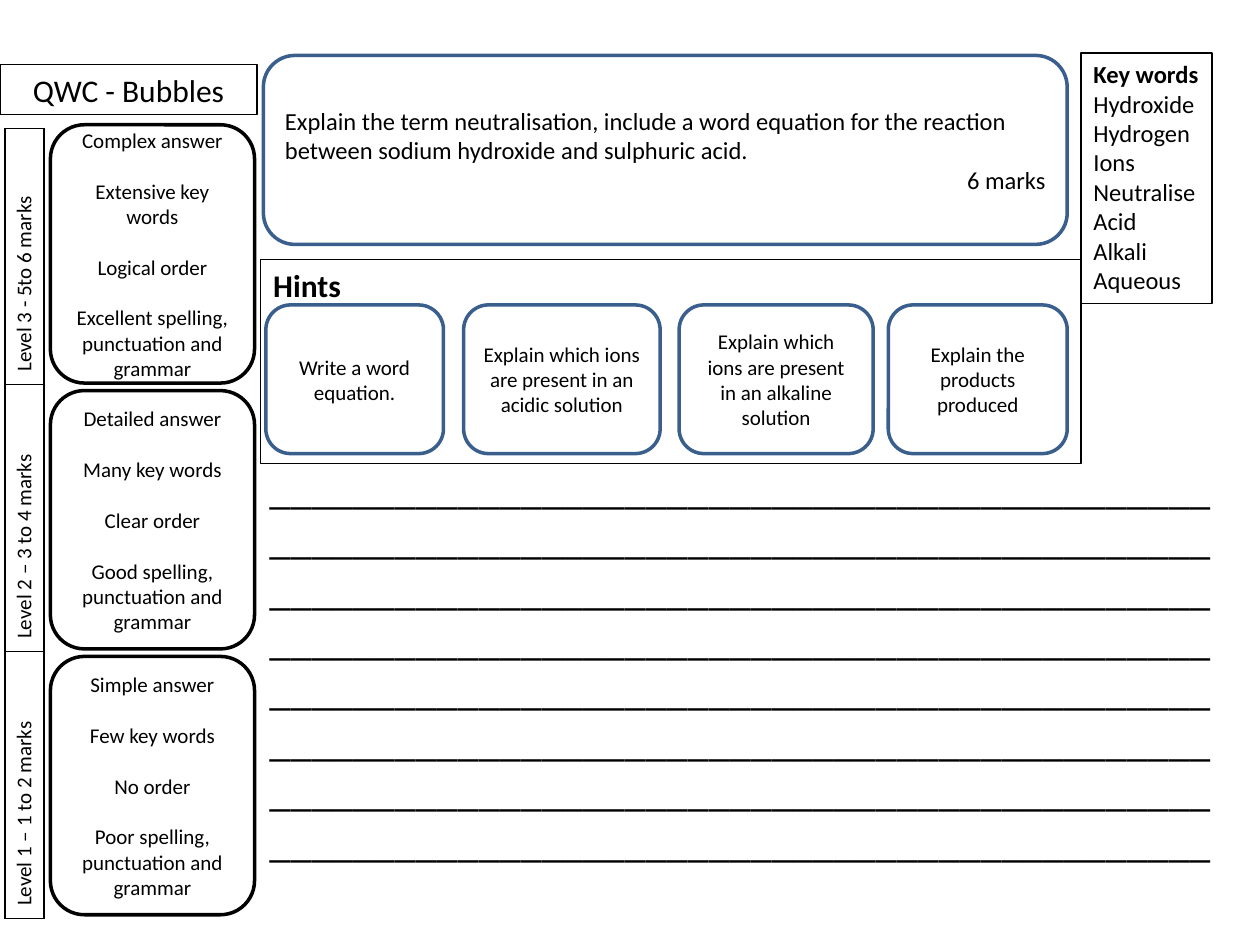
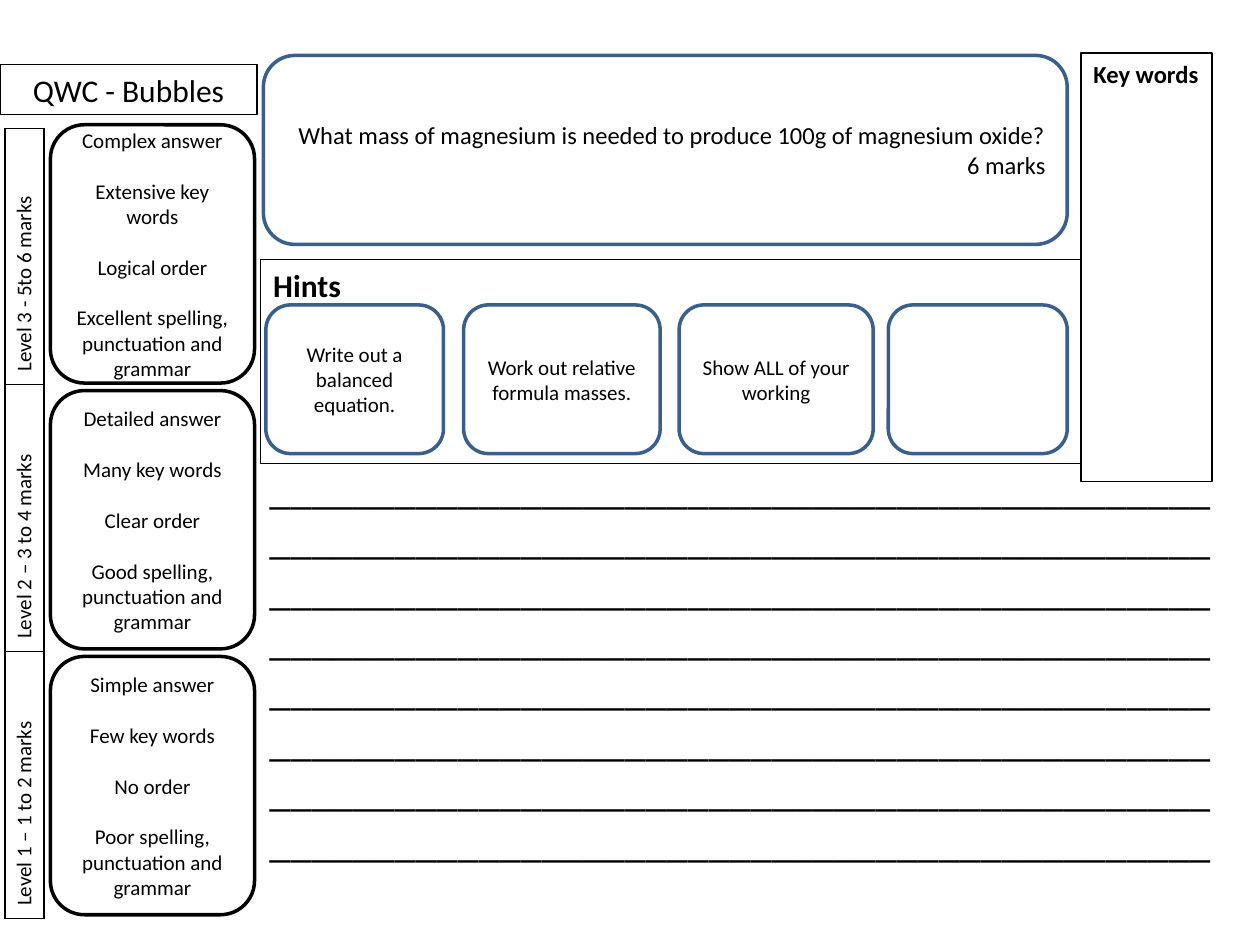
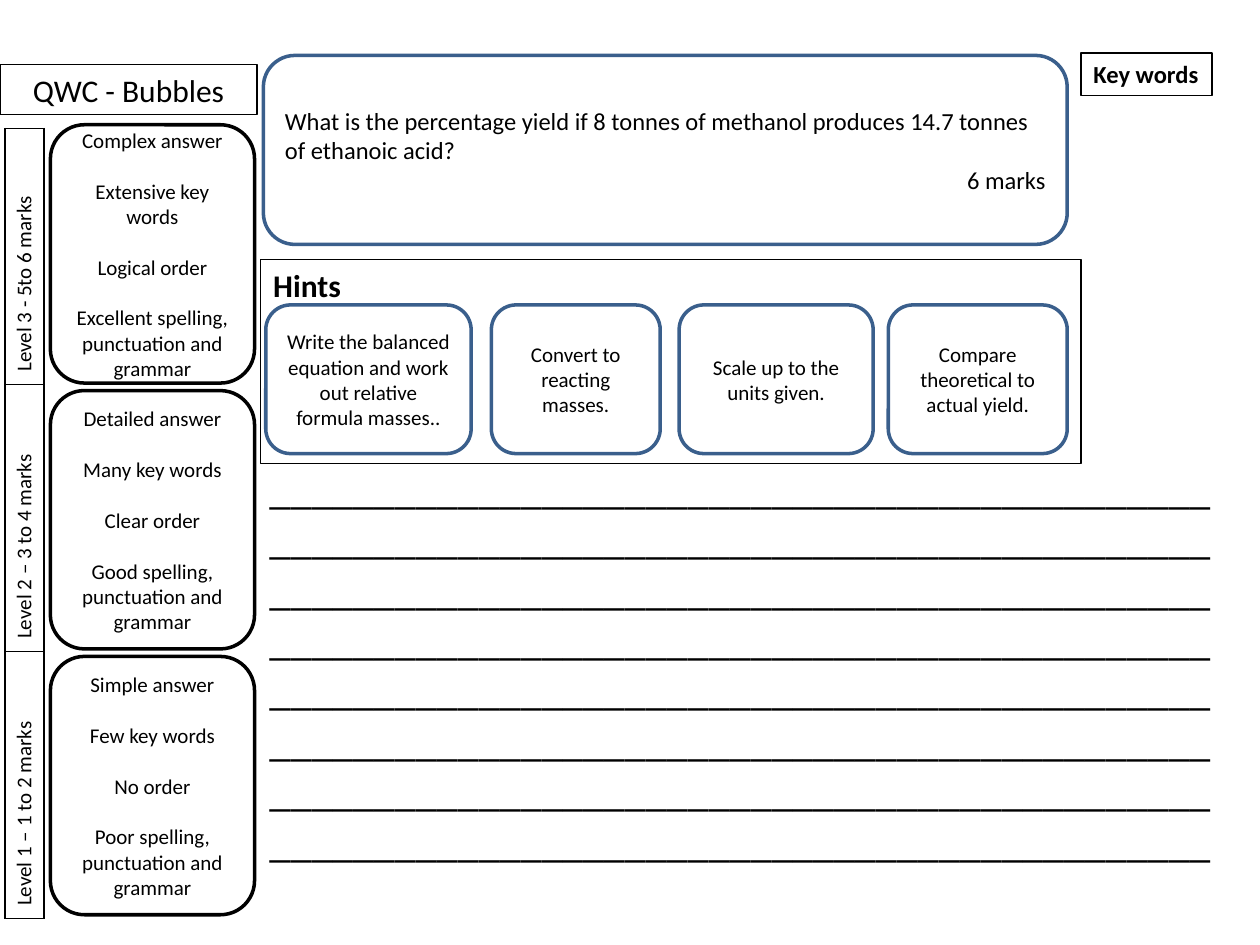
from pptx import Presentation
from pptx.dml.color import RGBColor
from pptx.enum.shapes import MSO_SHAPE as Preset
from pptx.enum.text import MSO_ANCHOR as Anchor, MSO_AUTO_SIZE as AutoSize, PP_ALIGN as Align
from pptx.oxml.ns import qn
from pptx.util import Inches, Pt
from lxml.etree import SubElement

# Shared look
BLACK, BLUE = "000000", "3A5F8C"
FONT = "Calibri"
BLANK_LINE = 14.6
TITLE_ONLY = 5

# Content shared by every worksheet
LEVELS = [
    ("Level 3 - 5to 6 marks", ["Complex answer", "Extensive key words", "Logical order",
                               "Excellent spelling, punctuation and grammar"]),
    ("Level 2 – 3 to 4 marks", ["Detailed answer", "Many key words", "Clear order",
                                "Good spelling, punctuation and grammar"]),
    ("Level 1 – 1 to 2 marks", ["Simple answer", "Few key words", "No order",
                                "Poor spelling, punctuation and grammar"]),
]
LEVEL_ROWS = [2.03, 2.12, 2.12]
ANSWER_LINES = ["_" * 45] * 8

# Content of each worksheet
WORKSHEETS = [
    {
        "question": "Explain the term neutralisation, include a word equation for the "
                    "reaction between sodium hydroxide and sulphuric acid.",
        "question_align": Align.LEFT,
        "key_words": ["Hydroxide", "Hydrogen", "Ions", "Neutralise", "Acid", "Alkali", "Aqueous"],
        "key_height": 1.99,
        "first_hint_width": 1.41,
        "hints": ["Write a word equation.",
                  "Explain which ions are present in an acidic solution",
                  "Explain which ions are present in an alkaline solution",
                  "Explain the products produced"],
    },
    {
        "question": "What mass of magnesium is needed to produce 100g of magnesium oxide?",
        "question_align": Align.RIGHT,
        "key_words": [],
        "key_height": 3.4,
        "first_hint_width": 1.41,
        "hints": ["Write out a balanced equation.", "Work out relative formula masses.",
                  "Show ALL of your working", ""],
    },
    {
        "question": "What is the percentage yield if 8 tonnes of methanol produces "
                    "14.7 tonnes of ethanoic acid?",
        "question_align": Align.LEFT,
        "key_words": [],
        "key_height": 0.34,
        "first_hint_width": 1.63,
        "hints": ["Write the balanced equation and work out relative formula masses..",
                  "Convert to reacting masses.", "Scale up to the units given.",
                  "Compare theoretical to actual yield."],
    },
]


def color(hex_value):
    return RGBColor.from_string(hex_value)


def set_attributes(target, values):
    for name, value in values.items():
        setattr(target, name, value)


def place(shape, left, top, width, height):
    box = {"left": left, "top": top, "width": width, "height": height}
    set_attributes(shape, {name: Inches(value) for name, value in box.items()})


def outline(shape, line_color, width):
    shape.fill.background()
    shape.line.color.rgb = color(line_color)
    shape.line.width = Pt(width)


def write(frame, lines, size, align=Align.LEFT, anchor=Anchor.TOP, wrap=True, bold=False, gap=0):
    """Write one paragraph per line, with a gap in points between them."""
    set_attributes(frame, {"word_wrap": wrap, "auto_size": AutoSize.NONE,
                           "vertical_anchor": anchor})
    for index, line in enumerate(lines):
        paragraph = frame.add_paragraph() if index else frame.paragraphs[0]
        set_attributes(paragraph, {"alignment": align, "space_before": Pt(gap if index else 0)})
        run = paragraph.add_run()
        run.text = line
        set_attributes(run.font, {"name": FONT, "size": Pt(size), "bold": bold})
        run.font.color.rgb = color(BLACK)


def add_bubble(slide, box, line_color, lines, size=12, align=Align.CENTER, gap=0):
    shape = slide.shapes.add_shape(Preset.ROUNDED_RECTANGLE, *map(Inches, box))
    shape.shadow.inherit = False
    outline(shape, line_color, 2)
    if any(lines):
        write(shape.text_frame, lines, size, align, Anchor.MIDDLE, gap=gap)
    return shape


def add_text_box(slide, box, lines, size, bordered=True, **text_format):
    shape = slide.shapes.add_textbox(*map(Inches, box))
    if bordered:
        outline(shape, BLACK, 0.75)
    write(shape.text_frame, lines, size, **text_format)
    return shape


def add_title(slide):
    title = slide.shapes.title
    place(title, 0, 0.51, 2.04, 0.4)
    outline(title, BLACK, 0.75)
    write(title.text_frame, ["QWC - Bubbles"], 18, Align.CENTER)


def add_cell_borders(cell):
    properties = cell._tc.get_or_add_tcPr()
    for position, side in enumerate(("a:lnL", "a:lnR", "a:lnT", "a:lnB")):
        border = SubElement(properties, qn(side), w=str(Pt(1)))
        fill = SubElement(border, qn("a:solidFill"))
        SubElement(fill, qn("a:srgbClr"), val=BLACK)
        properties.insert(position, border)


def add_level_table(slide):
    box = (0.04, 1.02, 0.31, sum(LEVEL_ROWS))
    table = slide.shapes.add_table(len(LEVELS), 1, *map(Inches, box)).table
    set_attributes(table, {"first_row": False, "horz_banding": False})
    for index, (label, _) in enumerate(LEVELS):
        table.rows[index].height = Inches(LEVEL_ROWS[index])
        cell = table.cell(index, 0)
        write(cell.text_frame, [label], 12)
        cell.vertical_anchor = Anchor.MIDDLE
        cell.fill.background()
        cell._tc.get_or_add_tcPr().set("vert", "vert270")
        add_cell_borders(cell)


def add_level_bubbles(slide):
    for index, (_, criteria) in enumerate(LEVELS):
        add_bubble(slide, (0.4, 0.99 + 2.11 * index, 1.62, 2.05), BLACK, criteria, gap=BLANK_LINE)


def add_question(slide, question, align):
    bubble = add_bubble(slide, (2.09, 0.44, 6.38, 1.5), BLUE, [question, "6 marks"], 14, align)
    bubble.text_frame.paragraphs[-1].alignment = Align.RIGHT


def add_key_words(slide, words, height):
    box = add_text_box(slide, (8.58, 0.42, 1.04, height), ["Key words", *words], 14, wrap=False)
    box.text_frame.paragraphs[0].runs[0].font.bold = True


def add_hints(slide, hints, first_width):
    add_text_box(slide, (2.07, 2.06, 6.51, 1.62), ["Hints"], 18, bold=True)
    second_left = 2.11 + first_width + 0.16
    spans = [(2.11, first_width), (second_left, 5.24 - second_left), (5.39, 1.54), (7.05, 1.42)]
    for hint, (left, width) in zip(hints, spans):
        add_bubble(slide, (left, 2.42, width, 1.18), BLUE, [hint])


def main():
    presentation = Presentation()
    set_attributes(presentation, {"slide_width": Inches(10), "slide_height": Inches(7.5)})
    for sheet in WORKSHEETS:
        slide = presentation.slides.add_slide(presentation.slide_layouts[TITLE_ONLY])
        add_title(slide)
        add_level_table(slide)
        add_question(slide, sheet["question"], sheet["question_align"])
        add_key_words(slide, sheet["key_words"], sheet["key_height"])
        add_hints(slide, sheet["hints"], sheet["first_hint_width"])
        add_text_box(slide, (2.04, 3.62, 7.78, 3.74), ANSWER_LINES, 24, bordered=False)
        add_level_bubbles(slide)
    presentation.save("out.pptx")


if __name__ == "__main__":
    main()
